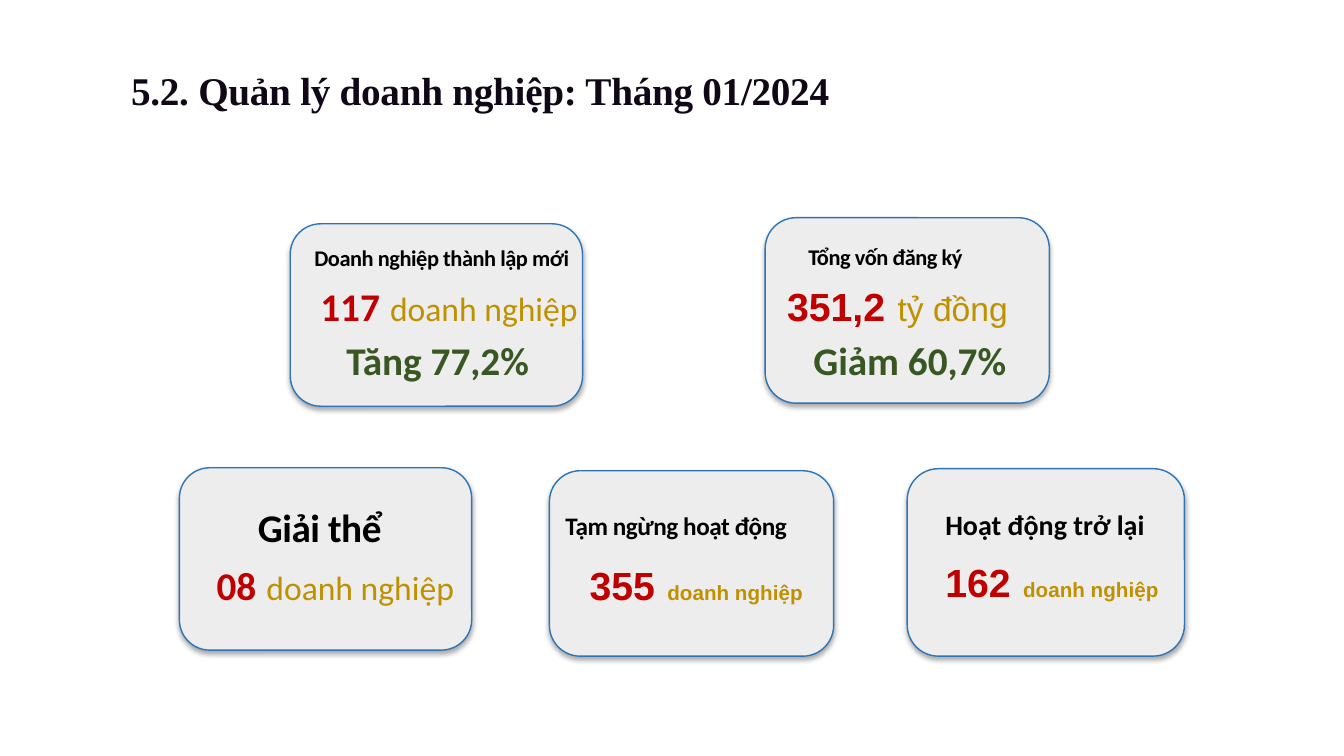
import dataclasses

import lxml.etree
import pptx
import pptx.dml.color
import pptx.enum.shapes
import pptx.enum.text
import pptx.oxml.ns
import pptx.util


@dataclasses.dataclass(frozen=True)
class Theme:
    heading_font: str = "Times New Roman"
    heading_color: str = "100717"
    heading_size: float = 28
    label_color: str = "000000"
    number_color: str = "C00000"
    unit_color: str = "BF9000"
    trend_color: str = "385723"
    card_fill: str = "EDEDED"
    card_line: str = "2E75B6"
    label_font: str = "Calibri"
    number_size: float = 28
    gap_size: float = 32
    trend_size: float = 28


THEME = Theme()
SLIDE_WIDTH, SLIDE_HEIGHT = 13.33, 7.5

HEADING = "5.2. Quản lý doanh nghiệp: Tháng 01/2024"
HEADING_BOX = (8.93, 8.13, 54.15, 7.6)

# Boxes are left, top, width, height in percent of the slide.
CARDS = [
    {"box": (56.93, 28.8, 21.15, 24.53),
     "label": ("Tổng vốn đăng ký", 16, -0.3, (59.4, 31.47, 15.38, 8.53)),
     "figure": ("351,2", "tỷ đồng", "Arial", 24, False, (57.83, 36, 18.15, 8.53)),
     "trend": ("Giảm 60,7%", (59.78, 43.87, 16.05, 7.6))},
    {"box": (21.6, 29.6, 21.75, 24.13),
     "label": ("Doanh nghiệp thành lập mới", 16, -0.3, (22.65, 31.6, 20.7, 8.53)),
     "figure": ("117", "doanh nghiệp", "Calibri", 24, False, (23.1, 36, 20.85, 8.53)),
     "trend": (" Tăng 77,2%", (24.38, 43.87, 15.9, 7.6))},
    {"box": (40.88, 62.27, 21.15, 24.53),
     "label": ("Tạm ngừng hoạt động", 18, -0.3, (41.33, 66.8, 21, 8.93)),
     "figure": ("355", "doanh nghiệp", "Arial", 14.7, True, (43.13, 72.8, 17.55, 8.53))},
    {"box": (67.5, 62, 20.63, 24.8),
     "label": ("Hoạt động trở lại", 20, 0, (69.6, 66.53, 16.43, 9.47)),
     "figure": ("162", "doanh nghiệp", "Arial", 14.7, True, (69.6, 72.4, 17.55, 8.53))},
    {"box": (13.35, 61.87, 21.75, 24.13),
     "label": ("Giải thể", 28, -0.3, (18.45, 65.87, 12.38, 11.2)),
     "figure": ("08", "doanh nghiệp", "Calibri", 24, False, (15.38, 72.8, 19.35, 8.53))},
]


def place(box):
    left, top, width, height = box
    return [pptx.util.Inches(share * side / 100) for share, side in
            ((left, SLIDE_WIDTH), (top, SLIDE_HEIGHT),
             (width, SLIDE_WIDTH), (height, SLIDE_HEIGHT))]


def rgb(color):
    return pptx.dml.color.RGBColor.from_string(color)


def style(run, font, size, color, bold=True, spacing=0):
    run.font.name = font
    run.font.size = pptx.util.Pt(size)
    run.font.bold = bold
    run.font.color.rgb = rgb(color)
    if spacing:
        run.font._element.set("spc", str(round(spacing * 100)))


def fit(frame):
    frame.word_wrap = False
    frame.auto_size = pptx.enum.text.MSO_AUTO_SIZE.SHAPE_TO_FIT_TEXT
    frame.vertical_anchor = pptx.enum.text.MSO_ANCHOR.TOP


def add_line(shapes, box, *pieces):
    frame = shapes.add_textbox(*place(box)).text_frame
    fit(frame)
    for words, *look in pieces:
        run = frame.paragraphs[0].add_run()
        run.text = words
        style(run, *look)
    return frame.paragraphs[0]


def cast_shadow(panel):
    panel.shadow.inherit = False
    effects = panel._element.spPr.find(pptx.oxml.ns.qn("a:effectLst"))
    shadow = lxml.etree.SubElement(
        effects, pptx.oxml.ns.qn("a:outerShdw"), blurRad=str(pptx.util.Pt(3.5)),
        dist=str(pptx.util.Pt(2.2)), dir="5400000", rotWithShape="0")
    tint = lxml.etree.SubElement(shadow, pptx.oxml.ns.qn("a:srgbClr"), val="000000")
    lxml.etree.SubElement(tint, pptx.oxml.ns.qn("a:alpha"), val="32000")


def add_card(slide, card):
    shapes = slide.shapes.add_group_shape().shapes
    panel = shapes.add_shape(
        pptx.enum.shapes.MSO_SHAPE.ROUNDED_RECTANGLE, *place(card["box"]))
    panel.fill.solid()
    panel.fill.fore_color.rgb = rgb(THEME.card_fill)
    panel.line.color.rgb = rgb(THEME.card_line)
    panel.line.width = pptx.util.Pt(1)
    cast_shadow(panel)

    label, size, spacing, box = card["label"]
    add_line(shapes, box,
             (label, THEME.label_font, size, THEME.label_color, True, spacing))

    number, unit, font, unit_size, unit_bold, box = card["figure"]
    add_line(shapes, box,
             (number, font, THEME.number_size, THEME.number_color),
             (" ", font, THEME.gap_size, THEME.trend_color),
             (unit, font, unit_size, THEME.unit_color, unit_bold))

    if "trend" in card:
        trend, box = card["trend"]
        add_line(shapes, box,
                 (trend, THEME.label_font, THEME.trend_size, THEME.trend_color))


def add_heading(slide):
    heading = slide.shapes.title
    heading.left, heading.top, heading.width, heading.height = place(HEADING_BOX)
    frame = heading.text_frame
    frame.text = HEADING
    fit(frame)
    line = frame.paragraphs[0]
    line.alignment = pptx.enum.text.PP_ALIGN.LEFT
    line.space_before = pptx.util.Pt(3)
    line._p.get_or_add_pPr().set("marL", str(pptx.util.Inches(0.01)))
    style(line.runs[0], THEME.heading_font, THEME.heading_size,
          THEME.heading_color, True, -0.2)


def main():
    deck = pptx.Presentation()
    deck.slide_width = pptx.util.Inches(SLIDE_WIDTH)
    deck.slide_height = pptx.util.Inches(SLIDE_HEIGHT)
    slide = deck.slides.add_slide(deck.slide_layouts.get_by_name("Title Only"))
    add_heading(slide)
    for card in CARDS:
        add_card(slide, card)
    deck.save("out.pptx")


if __name__ == "__main__":
    main()
